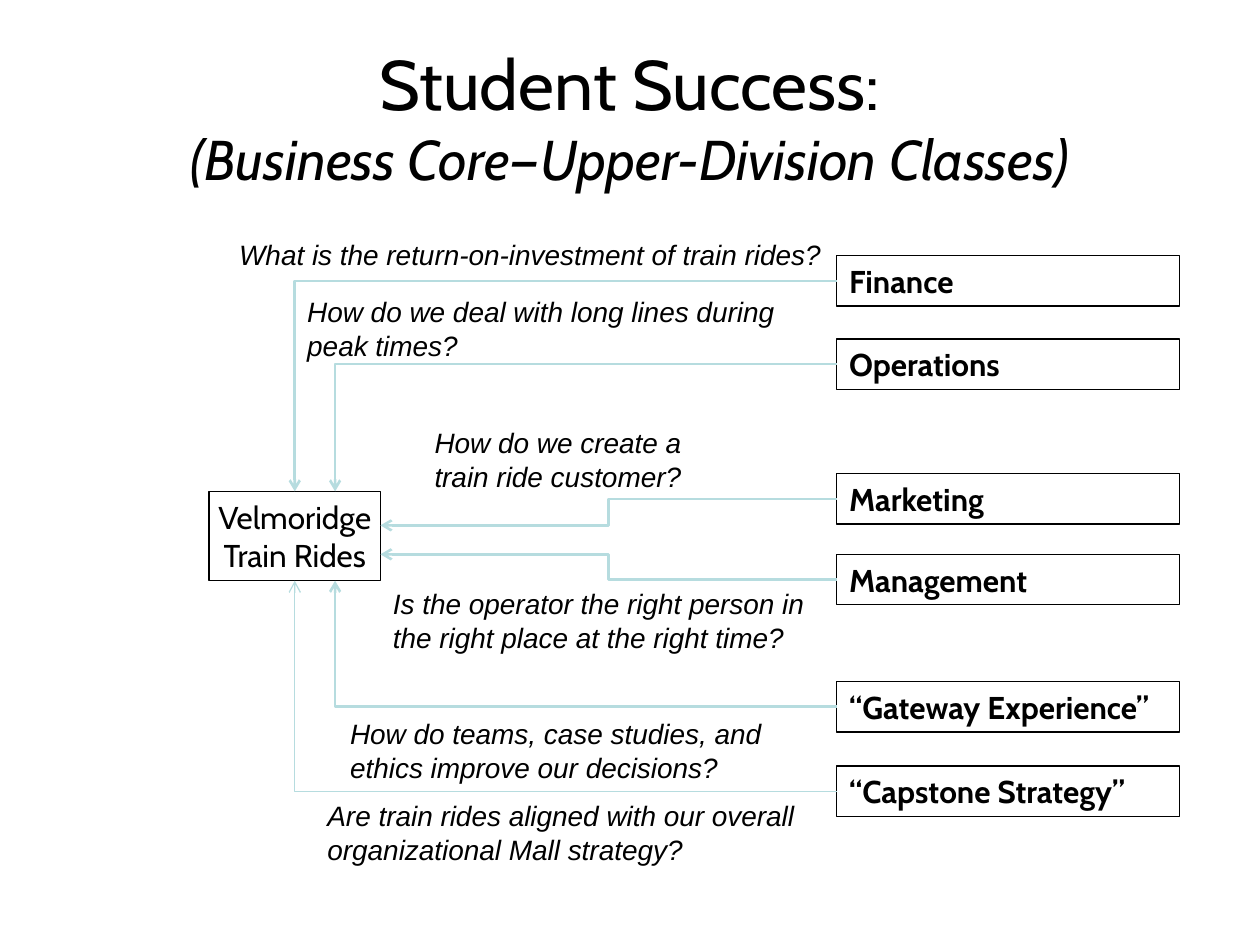
from pptx import Presentation
from pptx.dml.color import RGBColor
from pptx.enum.shapes import MSO_CONNECTOR, MSO_SHAPE
from pptx.enum.text import MSO_ANCHOR, MSO_AUTO_SIZE, PP_ALIGN
from pptx.oxml.ns import qn
from pptx.util import Inches, Pt
from lxml.etree import SubElement


def color(value):
    return RGBColor.from_string(value)


class Deck:
    """Hold the style and the current slide, and add each kind of element."""

    black, teal = "000000", "B6DCDF"
    heading, body = "Cabin", "Arial"

    def __init__(self, slide):
        self.slide = slide

    def font(self, target, name, size, bold=False, italic=False):
        f = target.font
        f.name, f.size, f.bold, f.italic = name, Pt(size), bold, italic
        f.color.rgb = color(self.black)

    def title(self, lines, left, top, width, height):
        sp = self.slide.shapes.title
        sp.left, sp.top = Inches(left), Inches(top)
        sp.width, sp.height = Inches(width), Inches(height)
        tf = sp.text_frame
        tf.vertical_anchor = MSO_ANCHOR.MIDDLE
        tf.auto_size = MSO_AUTO_SIZE.NONE
        p = tf.paragraphs[0]
        p.alignment = PP_ALIGN.CENTER
        for i, (text, size, italic) in enumerate(lines):
            if i:
                p.add_line_break()
            r = p.add_run()
            r.text = text
            self.font(r, self.heading, size, italic=italic)

    def box(self, text, left, top, width, height, bold=True, wrap=True,
            align=PP_ALIGN.LEFT, anchor=MSO_ANCHOR.TOP):
        sp = self.slide.shapes.add_shape(
            MSO_SHAPE.RECTANGLE, Inches(left), Inches(top), Inches(width), Inches(height))
        sp.shadow.inherit = False
        sp.fill.background()
        sp.line.color.rgb = color(self.black)
        sp.line.width = Pt(0.75)
        tf = sp.text_frame
        tf.text = text
        tf.word_wrap = wrap
        tf.vertical_anchor = anchor
        for p in tf.paragraphs:
            p.alignment = align
            self.font(p, self.heading, 18, bold=bold)

    def question(self, text, left, top, width, height):
        sp = self.slide.shapes.add_textbox(
            Inches(left), Inches(top), Inches(width), Inches(height))
        tf = sp.text_frame
        tf.word_wrap = True
        tf.text = text
        for p in tf.paragraphs:
            self.font(p, self.body, 16, italic=True)

    def arrow(self, x1, y1, x2, y2, preset="bentConnector3", weight=1.5):
        sp = self.slide.shapes.add_connector(
            MSO_CONNECTOR.ELBOW, Inches(x1), Inches(y1), Inches(x2), Inches(y2))
        sp.line.color.rgb = color(self.teal)
        sp.line.width = Pt(weight)
        props = sp._element.spPr
        props.find(qn("a:prstGeom")).set("prst", preset)
        SubElement(props.find(qn("a:ln")), qn("a:tailEnd"), type="arrow")
        SubElement(props, qn("a:effectLst"))


def main():
    prs = Presentation()
    prs.slide_width, prs.slide_height = Inches(10), Inches(7.5)
    deck = Deck(prs.slides.add_slide(prs.slide_layouts[5]))
    deck.title([("Student Success:", 40, False),
                ("(Business Core—Upper-Division Classes)", 32, True)], 0.5, 0.3, 9, 1.25)

    hub_left, hub_top, hub_width, hub_height = 1.66, 3.9, 1.36, 0.71
    hub_right, hub_bottom = hub_left + hub_width, hub_top + hub_height
    deck.box("Velmoridge\nTrain Rides", hub_left, hub_top, hub_width, hub_height,
             bold=False, wrap=False, align=PP_ALIGN.CENTER, anchor=MSO_ANCHOR.MIDDLE)

    course_left, course_width, course_height = 6.64, 2.72, 0.4
    outer, inner = 2.34, 2.66
    corner, step = "bentConnector2", "bentConnector3"
    courses = [
        ("Finance", 2.03, outer, hub_top, corner, 1.5),
        ("Operations", 2.69, inner, hub_top, corner, 1.5),
        ("Marketing", 3.76, hub_right, 4.17, step, 1.5),
        ("Management", 4.4, hub_right, 4.4, step, 1.5),
        ("“Gateway Experience”", 5.41, inner, hub_bottom, corner, 1.5),
        ("“Capstone Strategy”", 6.08, outer, hub_bottom, corner, 0.75),
    ]
    for name, top, end_x, end_y, preset, weight in courses:
        deck.box(name, course_left, top, course_width, course_height)
        deck.arrow(course_left, top + course_height / 2, end_x, end_y, preset, weight)

    questions = [
        ("What is the return-on-investment of train rides?", 1.8, 1.84, 4.9, 0.37),
        ("How do we deal with long lines during\npeak times?", 2.34, 2.29, 4.07, 0.64),
        ("How do we create a train ride customer?", 3.35, 3.33, 2.62, 0.64),
        ("Is the operator the right person in the right place at the right time?",
         3.02, 4.61, 3.48, 0.64),
        ("How do teams, case studies, and ethics improve our decisions?",
         2.68, 5.64, 3.49, 0.64),
        ("Are train rides aligned with our overall organizational Mall strategy?",
         2.5, 6.29, 3.92, 0.64),
    ]
    for text, left, top, width, height in questions:
        deck.question(text, left, top, width, height)

    prs.save("out.pptx")


if __name__ == "__main__":
    main()
